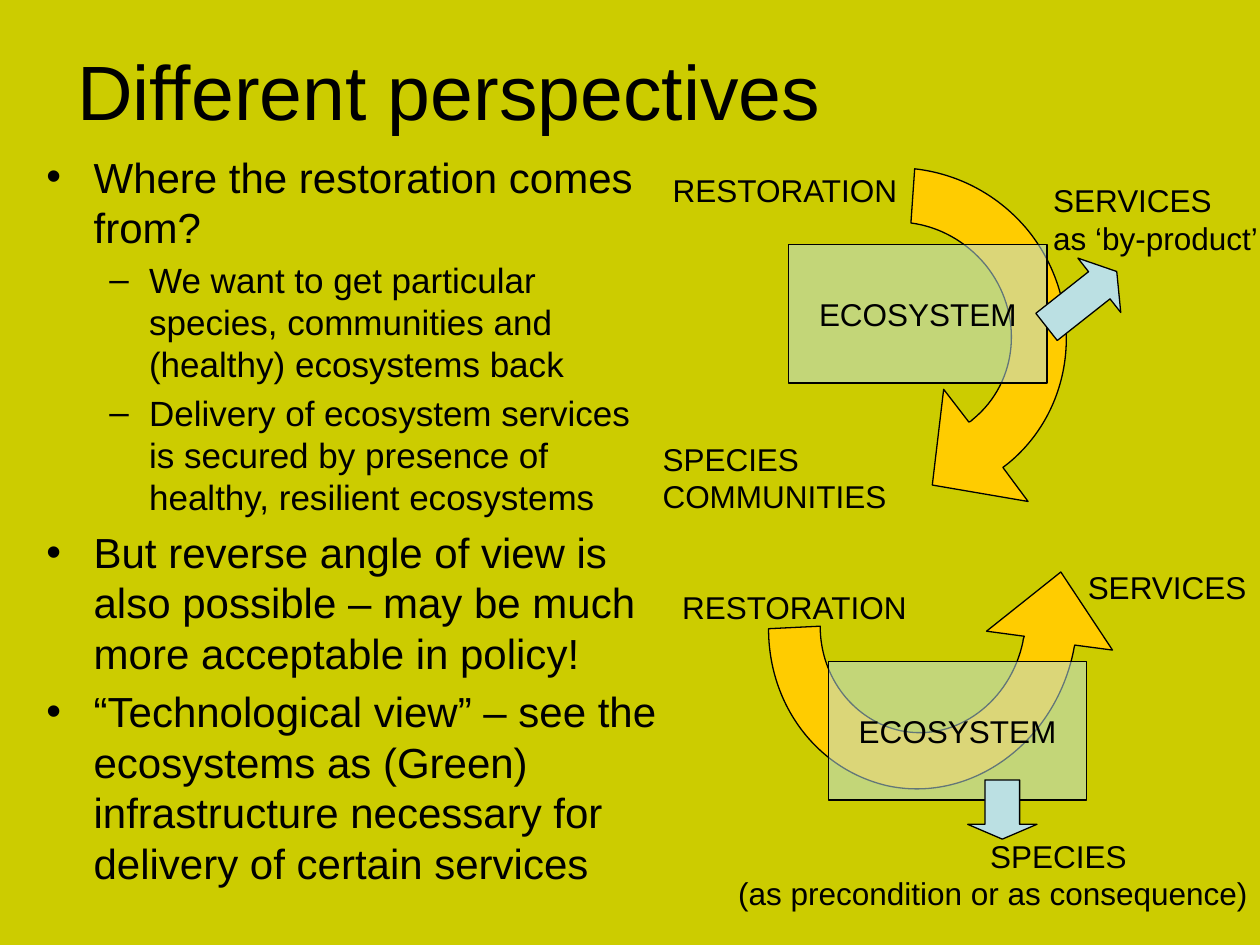
from lxml.etree import SubElement
from pptx import Presentation
from pptx.dml.color import RGBColor
from pptx.enum.shapes import MSO_SHAPE
from pptx.enum.text import MSO_ANCHOR, MSO_AUTO_SIZE, PP_ALIGN
from pptx.oxml.ns import qn
from pptx.util import Inches, Pt

deck = Presentation()
deck.slide_width, deck.slide_height = Inches(10), Inches(7.5)
col, row = deck.slide_width / 100, deck.slide_height / 75
slide = deck.slides.add_slide(deck.slide_layouts[6])
shapes = slide.shapes


def tint(fill, color):
    fill.solid()
    fill.fore_color.rgb = RGBColor.from_string(color)


def write(frame, lines, size):
    """Add one paragraph per line and return the paragraphs."""
    paras = [frame.paragraphs[0]] + [frame.add_paragraph() for _ in lines[1:]]
    for para, line in zip(paras, lines):
        run = para.add_run()
        run.text = line
        run.font.name, run.font.size = "Arial", Pt(size)
        tint(run.font.fill, "000000")
    return paras


tint(slide.background.fill, "CCCC00")

# Curved arrows: six numbers are a Bezier curve, two are a straight line
up = [(81.3, 50.5), (81.2, 50.7, 81.2, 50.8, 81.2, 50.9),
      (80.2, 55.7, 75.9, 58.9, 71.5, 58), (67.8, 57.2, 65.1, 53.8, 65.1, 49.7),
      (61, 49.9), (61, 56.1, 65, 61.2, 70.6, 62.4),
      (77.2, 63.7, 83.7, 58.9, 85.2, 51.7), (85.2, 51.5, 85.3, 51.3, 85.3, 51.2),
      (88.3, 51.6), (84.2, 45.4), (78.3, 50.1)]
down = [(76.9, 33.5), (77, 33.5, 77.1, 33.4, 77.2, 33.3),
        (80.9, 30.3, 81.3, 24.8, 78.2, 21), (76.7, 19.2, 74.6, 18, 72.3, 17.7),
        (72.6, 13.4), (76.1, 13.8, 79.3, 15.5, 81.6, 18.3),
        (86.2, 24, 85.5, 32.3, 80, 36.8), (79.9, 36.9, 79.7, 37, 79.6, 37.1),
        (81.6, 39.8), (74, 38.5), (74.9, 30.9)]
for parts in (up, down):
    dots = [(round(part[-2] * col), round(part[-1] * row)) for part in parts]
    pen = shapes.build_freeform(*dots[0])
    pen.add_line_segments(dots[1:])
    curve = pen.convert_to_shape()
    outline = next(curve._element.iter(qn("a:path")))
    for part, node in zip(parts, list(outline)):
        if len(part) == 6:
            node.tag = qn("a:cubicBezTo")
            node.remove(node[0])
            for x, y in zip(part[::2], part[1::2]):
                dot = SubElement(node, qn("a:pt"))
                dot.set("x", str(round(x * col) - curve.left))
                dot.set("y", str(round(y * row) - curve.top))
    curve.shadow.inherit = False
    tint(curve.fill, "FFCC00")
    tint(curve.line.fill, "000000")
    curve.line.width = Pt(0.75)

# Title
title = shapes.add_textbox(5.15 * col, 2.1 * row, 90 * col, 10.1 * row).text_frame
title.word_wrap = True
title.vertical_anchor = MSO_ANCHOR.MIDDLE
write(title, ["Different perspectives"], 44)

# Bullets
body = shapes.add_textbox(2.7 * col, 11.5 * row, 50.4 * col, 60.6 * row).text_frame
body.word_wrap = True
points = [
    (0, "Where the restoration comes from?"),
    (1, "We want to get particular species, communities and (healthy) ecosystems back"),
    (1, "Delivery of ecosystem services is secured by presence of healthy, "
        "resilient ecosystems"),
    (0, "But reverse angle of view is also possible – may be much more acceptable "
        "in policy!"),
    (0, "“Technological view” – see the ecosystems as (Green) infrastructure "
        "necessary for delivery of certain services"),
]
styles = [(24, 3.75, 3.75, "•"), (20, 8.15, 3.15, "–")]
for (level, _), para in zip(points, write(body, [text for _, text in points], 24)):
    size, left, hang, mark = styles[level]
    para.level = level
    para.space_before = Pt(size * 0.2)
    para.runs[0].font.size = Pt(size)
    props = para._p.get_or_add_pPr()
    props.set("marL", str(round(left * col)))
    props.set("indent", str(round(-hang * col)))
    SubElement(props, qn("a:buFont")).set("typeface", "Arial")
    SubElement(props, qn("a:buChar")).set("char", mark)

# Ecosystem boxes and small arrows
box, right, low = MSO_SHAPE.RECTANGLE, MSO_SHAPE.RIGHT_ARROW, MSO_SHAPE.DOWN_ARROW
blocks = [
    (box, 62.6, 19.4, 20.5, 11, 0, []),
    (right, 82.3, 21, 7.1, 5.5, 321.7, [0.5, 0.32]),
    (box, 65.75, 52.5, 20.5, 11, 0, []),
    (low, 76.8, 61.9, 5.5, 4.7, 0, [0.5, 0.25]),
]
for kind, x, y, wide, high, turn, bends in blocks:
    block = shapes.add_shape(kind, x * col, y * row, wide * col, high * row)
    block.shadow.inherit = False
    block.rotation = turn
    for spot, bend in enumerate(bends):
        block.adjustments[spot] = bend
    tint(block.fill, "BBE0E3")
    tint(block.line.fill, "000000")
    block.line.width = Pt(0.75)
    if kind == box:
        shade = block.fill._xPr.find(qn("a:solidFill"))[0]
        SubElement(shade, qn("a:alpha")).set("val", "53000")
        block.text_frame.word_wrap = False
        block.text_frame.vertical_anchor = MSO_ANCHOR.MIDDLE
        write(block.text_frame, ["ECOSYSTEM"], 18)[0].alignment = PP_ALIGN.CENTER

# Labels
labels = [
    (52.4, 13.1, 20.1, ["RESTORATION"]),
    (51.6, 34.4, 19.8, ["SPECIES", "COMMUNITIES"]),
    (82.6, 13.9, 18.3, ["SERVICES", "as ‘by-product’"]),
    (53.15, 46.2, 20.1, ["RESTORATION"]),
    (85.35, 44.6, 14.7, ["SERVICES"]),
    (57.6, 65.9, 42.7, ["SPECIES", "(as precondition or as consequence)"]),
]
for x, y, wide, lines in labels:
    high = 1 + 3 * len(lines)
    frame = shapes.add_textbox(x * col, y * row, wide * col, high * row).text_frame
    frame.word_wrap = False
    frame.auto_size = MSO_AUTO_SIZE.SHAPE_TO_FIT_TEXT
    paras = write(frame, lines, 18)
# The last label keeps its width, and its first line is set in from the left
frame.word_wrap = True
paras[0]._p.get_or_add_pPr().set("marL", str(round(20 * col)))

deck.save("out.pptx")
